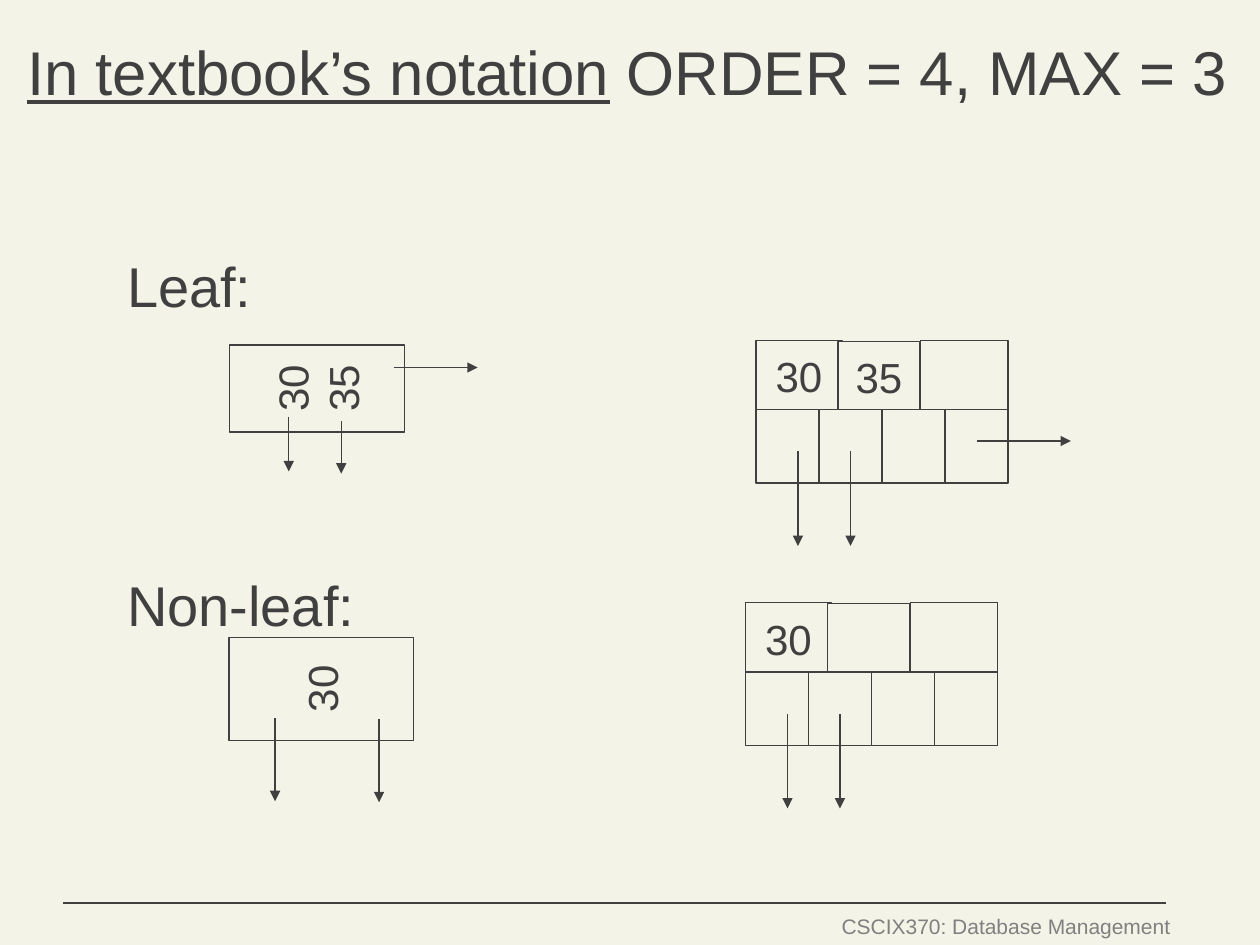
from dataclasses import dataclass
from itertools import accumulate

from pptx import Presentation
from pptx.dml.color import RGBColor
from pptx.enum.shapes import MSO_CONNECTOR as Connector, MSO_SHAPE as Shape
from pptx.enum.text import MSO_ANCHOR as Anchor, PP_ALIGN as Align
from pptx.oxml.ns import qn
from pptx.util import Inches, Pt
from lxml.etree import SubElement

COLUMNS, ROWS = 120, 90
WIDTH, HEIGHT = Inches(10), Inches(7.5)


@dataclass(frozen=True)
class Theme:
    paper: RGBColor = RGBColor.from_string("F3F3E7")
    ink: RGBColor = RGBColor.from_string("404040")
    muted: RGBColor = RGBColor.from_string("808080")
    font: str = "Arial"
    title: float = 35.3
    label: float = 32
    key: float = 24
    footer: float = 12
    rule: float = 0.75
    inset: float = 0.05


THEME = Theme()


def across(columns):
    return round(WIDTH * columns / COLUMNS)


def down(rows):
    return round(HEIGHT * rows / ROWS)


def place(left, top, width, height):
    return across(left), down(top), across(width), down(height)


def apply(target, values):
    for name, value in values.items():
        setattr(target, name, value)


def write(frame, lines, size, color=THEME.ink, align=Align.LEFT, wrap=False, anchor=Anchor.TOP):
    """Fill a frame; each line is a list of (text, underlined) runs."""
    margins = ("margin_left", "margin_top", "margin_right", "margin_bottom")
    apply(frame, dict.fromkeys(margins, Inches(THEME.inset)))
    apply(frame, {"word_wrap": wrap, "vertical_anchor": anchor})
    for number, runs in enumerate(lines):
        paragraph = frame.add_paragraph() if number else frame.paragraphs[0]
        paragraph.alignment = align
        for text, underlined in runs:
            run = paragraph.add_run()
            run.text = text
            apply(run.font, {"name": THEME.font, "size": Pt(size), "underline": underlined})
            run.font.color.rgb = color


def add_text(slide, area, runs, size, **style):
    write(slide.shapes.add_textbox(*place(*area)).text_frame, [runs], size, **style)


def add_box(slide, area, keys=(), rotation=0):
    box = slide.shapes.add_shape(Shape.RECTANGLE, *place(*area))
    apply(box, {"rotation": rotation})
    box.shadow.inherit = False
    box.fill.solid()
    box.fill.fore_color.rgb = THEME.paper
    box.line.color.rgb = THEME.ink
    box.line.width = Pt(THEME.rule)
    if keys:
        write(box.text_frame, [[(key, False)] for key in keys], THEME.key,
              align=Align.CENTER, anchor=Anchor.MIDDLE)


def add_line(slide, left, top, right=0, drop=0, arrow=True):
    """Draw a line that runs the given columns right and rows down."""
    line = slide.shapes.add_connector(
        Connector.STRAIGHT, across(left), down(top), across(left + right), down(top + drop))
    line.line.color.rgb = THEME.ink
    line.line.width = Pt(THEME.rule)
    if arrow:
        SubElement(line.line._get_or_add_ln(), qn("a:tailEnd"), type="triangle")
    SubElement(line._element.spPr, qn("a:effectLst"))


def add_compact_node(slide, center, length, depth, keys, pointers):
    """Draw a node turned on its side, with (column, row, drop) pointers."""
    x, y = center
    add_box(slide, (x - depth / 2, y - length / 2, depth, length), keys, rotation=270)
    for column, row, drop in pointers:
        add_line(slide, column, row, drop=drop)


def add_textbook_node(slide, left, top, keys):
    """Draw three key cells above four pointer cells, two of them in use."""
    key_widths = (8.2, 7.8, 8.3)
    key_lefts = accumulate((left, 7.8, 7.9))
    key_tops = (top, top + 0.1, top)
    for x, y, width, key in zip(key_lefts, key_tops, key_widths, keys):
        add_box(slide, (x, y, width, 6.8), [key] if key else ())
    for index in range(4):
        add_box(slide, (left + 6 * index, top + 6.6, 6, 7))
    for offset in (4, 9):
        add_line(slide, left + offset, top + 10.6, drop=9)


def main():
    deck = Presentation()
    apply(deck, {"slide_width": WIDTH, "slide_height": HEIGHT})
    slide = deck.slides.add_slide(deck.slide_layouts[6])
    slide.background.fill.solid()
    slide.background.fill.fore_color.rgb = THEME.paper

    add_line(slide, 6, 86, right=105, arrow=False)
    add_text(slide, (79.3, 86.4, 32.8, 3.5), [("CSCIX370: Database Management", False)],
             THEME.footer, color=THEME.muted, align=Align.RIGHT)
    add_text(slide, (2, 2.6, 116, 14),
             [("In textbook’s notation", True), (" ORDER = 4, MAX = 3", False)],
             THEME.title, wrap=True)
    for label, row in (("Leaf:", 23.4), ("Non-leaf:", 53.7)):
        add_text(slide, (11.5, row, 94, 7.2), [(label, False)], THEME.label, wrap=True)

    add_compact_node(slide, (30.2, 37), 16.7, 8.3, ("30", "35"),
                     ((27.5, 39.7, 5.2), (32.5, 40.1, 5)))
    add_compact_node(slide, (30.6, 65.6), 17.6, 9.8, ("30",),
                     ((26.2, 68.4, 7.9), (36.1, 68.5, 7.9)))
    add_textbook_node(slide, 72, 32.4, ("30", "35", ""))
    add_textbook_node(slide, 71, 57.4, ("30", "", ""))
    add_line(slide, 37.5, 35, right=8)
    add_line(slide, 93, 42, right=9)

    deck.save("out.pptx")


if __name__ == "__main__":
    main()
